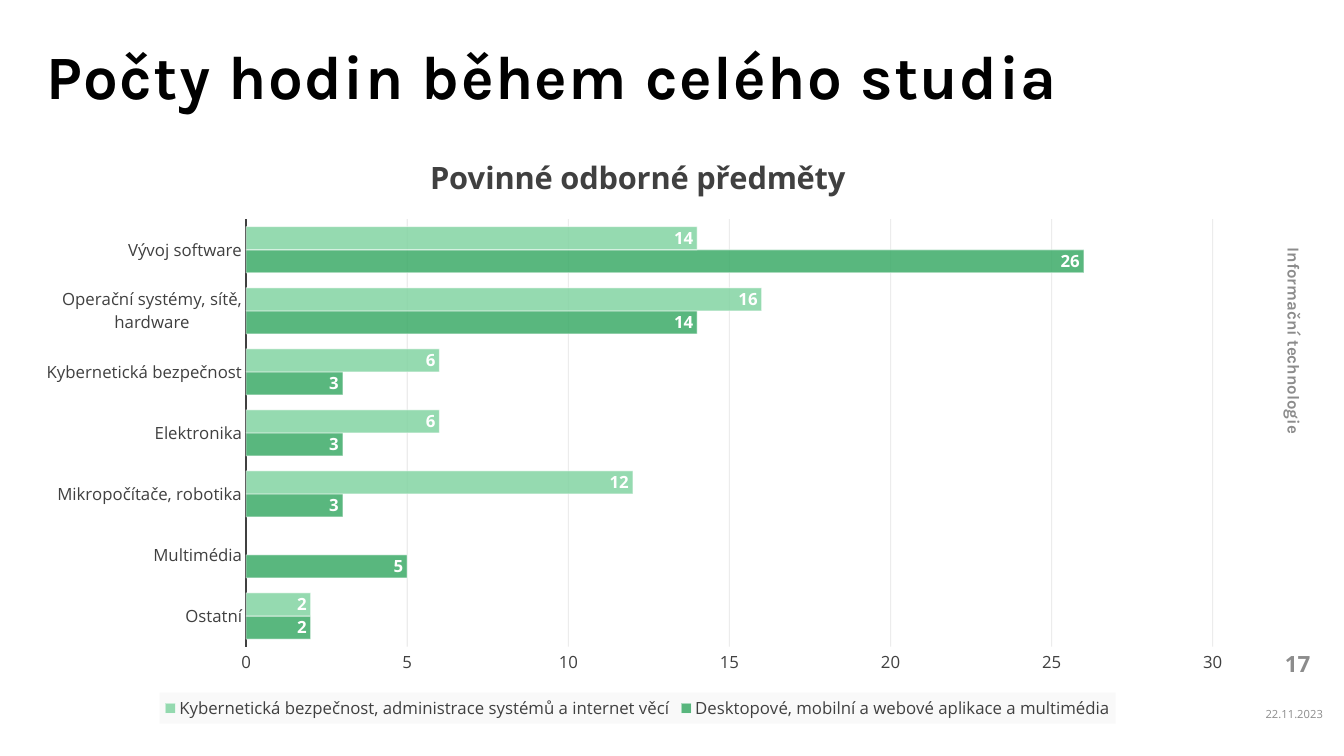
from lxml.etree import SubElement
from pptx import Presentation
from pptx.chart.data import CategoryChartData
from pptx.dml.color import RGBColor
from pptx.enum.chart import XL_CHART_TYPE, XL_LABEL_POSITION, XL_LEGEND_POSITION, XL_TICK_MARK
from pptx.enum.text import MSO_ANCHOR, PP_ALIGN
from pptx.oxml import parse_xml
from pptx.oxml.ns import nsdecls, qn
from pptx.util import Pt

INK = "404040"
MUTED = "8C8C8C"
WHITE = "FFFFFF"
SUBJECTS = ["Ostatní", "Multimédia", "Mikropočítače, robotika", "Elektronika",
            "Kybernetická bezpečnost", "Operační systémy, sítě, hardware", "Vývoj software"]
PROGRAMMES = [
    ("Desktopové, mobilní a webové aplikace a multimédia", [2, 5, 3, 3, 3, 14, 26], "3CAB68"),
    ("Kybernetická bezpečnost, administrace systémů a internet věcí",
     [2, None, 12, 6, 6, 16, 14], "83D4A3"),
]


def color(value):
    return RGBColor.from_string(value)


def style(font, name, size, value, bold=False):
    font.name = name
    font.size = Pt(size)
    font.bold = bold
    font.color.rgb = color(value)


def set_alpha(fill_owner, percent):
    for tint in fill_owner.iter(qn("a:srgbClr")):
        SubElement(tint, qn("a:alpha")).set("val", str(percent * 1000))


def place(shape, box):
    shape.left, shape.top, shape.width, shape.height = [Pt(length) for length in box]


def write(shape, text, name, size, value, bold, align):
    frame = shape.text_frame
    frame.word_wrap = True
    frame.vertical_anchor = MSO_ANCHOR.MIDDLE
    frame.text = text
    para = frame.paragraphs[0]
    para.alignment = align
    style(para.runs[0].font, name, size, value, bold)
    return para


def add_heading(page, box):
    title = page.shapes.title
    place(title, box)
    para = write(title, "Počty hodin během celého studia", "Karla", 44, "000000", True, PP_ALIGN.LEFT)
    para.line_spacing = 0.9
    para.runs[0].font._element.set("spc", "100")


def add_label(page, box, text, name, size, bold, align, rotation=0):
    label = page.shapes.add_textbox(*[Pt(length) for length in box])
    label.rotation = rotation
    write(label, text, name, size, MUTED, bold, align)


def style_axes(chart):
    for axis in (chart.category_axis, chart.value_axis):
        axis.major_tick_mark = axis.minor_tick_mark = XL_TICK_MARK.NONE
        style(axis.tick_labels.font, "Open Sans", 12, INK)
    base = chart.category_axis.format.line
    base.width = Pt(1.5)
    base.color.rgb = color(INK)
    scale = chart.value_axis
    scale.minimum_scale, scale.maximum_scale, scale.major_unit = 0, 30, 5
    scale.format.line.fill.background()
    grid = scale.major_gridlines.format.line
    grid.width = Pt(0.75)
    grid.color.rgb = color("0D0D0D")
    set_alpha(scale.major_gridlines._xAx.find(qn("c:majorGridlines")), 8)


def style_series(plot):
    plot.gap_width = 65
    plot.overlap = 0
    plot.vary_by_categories = False
    for series, (_, _, tint) in zip(plot.series, PROGRAMMES):
        series.format.fill.solid()
        series.format.fill.fore_color.rgb = color(tint)
        properties = series._element.find(qn("c:spPr"))
        set_alpha(properties, 85)
        outline = series.format.line
        outline.width = Pt(0.75)
        outline.color.rgb = color(WHITE)
        set_alpha(properties.find(qn("a:ln")), 50)
        labels = series.data_labels
        labels.show_value = True
        labels.position = XL_LABEL_POSITION.INSIDE_END
        style(labels.font, "Open Sans", 12, WHITE, True)


def style_legend(chart):
    chart.has_legend = True
    legend = chart.legend
    legend.position = XL_LEGEND_POSITION.BOTTOM
    legend.include_in_layout = False
    style(legend.font, "Open Sans", 12, INK)
    backdrop = parse_xml(f'<c:spPr {nsdecls("c", "a")}><a:solidFill>'
                         '<a:srgbClr val="F9F9F9"/></a:solidFill></c:spPr>')
    legend._element.find(qn("c:txPr")).addprevious(backdrop)


def fix_plot_area(chart, x, y, width, height):
    area = chart._chartSpace.chart.plotArea
    for layout in area.findall(qn("c:layout")):
        area.remove(layout)
    area.insert(0, parse_xml(
        f'<c:layout {nsdecls("c")}><c:manualLayout><c:layoutTarget val="inner"/>'
        f'<c:xMode val="edge"/><c:yMode val="edge"/><c:x val="{x}"/><c:y val="{y}"/>'
        f'<c:w val="{width}"/><c:h val="{height}"/></c:manualLayout></c:layout>'))


def add_hours_chart(page, box):
    data = CategoryChartData()
    data.categories = SUBJECTS
    for name, hours, _ in PROGRAMMES:
        data.add_series(name, hours)
    frame = page.shapes.add_chart(XL_CHART_TYPE.BAR_CLUSTERED, *[Pt(length) for length in box], data)
    chart = frame.chart
    style(chart.font, "Open Sans", 10, "000000")
    chart.has_title = True
    heading = chart.chart_title.text_frame
    heading.text = "Povinné odborné předměty"
    style(heading.paragraphs[0].runs[0].font, "Open Sans", 22, INK, True)
    style_axes(chart)
    style_series(chart.plots[0])
    style_legend(chart)
    fix_plot_area(chart, 0.18, 0.15, 0.79, 0.72)


def add_margin(page, box):
    left, top, width, height = box
    center = left + width / 2
    add_label(page, (center - 215, top + 224.5, 430, 38), "Informační technologie",
              "Karla", 12, True, PP_ALIGN.CENTER, 90)
    add_label(page, (left + 14.5, top + 459.5, 38, 29), "17", "Open Sans", 16, True, PP_ALIGN.RIGHT)
    add_label(page, (left, top + 502, width, 16), "22.11.2023", "Open Sans", 8, False, PP_ALIGN.CENTER)


def main():
    deck = Presentation()
    deck.slide_width, deck.slide_height = Pt(960), Pt(540)
    page = deck.slides.add_slide(deck.slide_layouts[5])
    add_heading(page, (26, 29, 858, 56))
    add_hours_chart(page, (18.5, 93, 874, 424))
    add_margin(page, (890.5, 0, 68, 540))
    deck.save("out.pptx")


if __name__ == "__main__":
    main()
